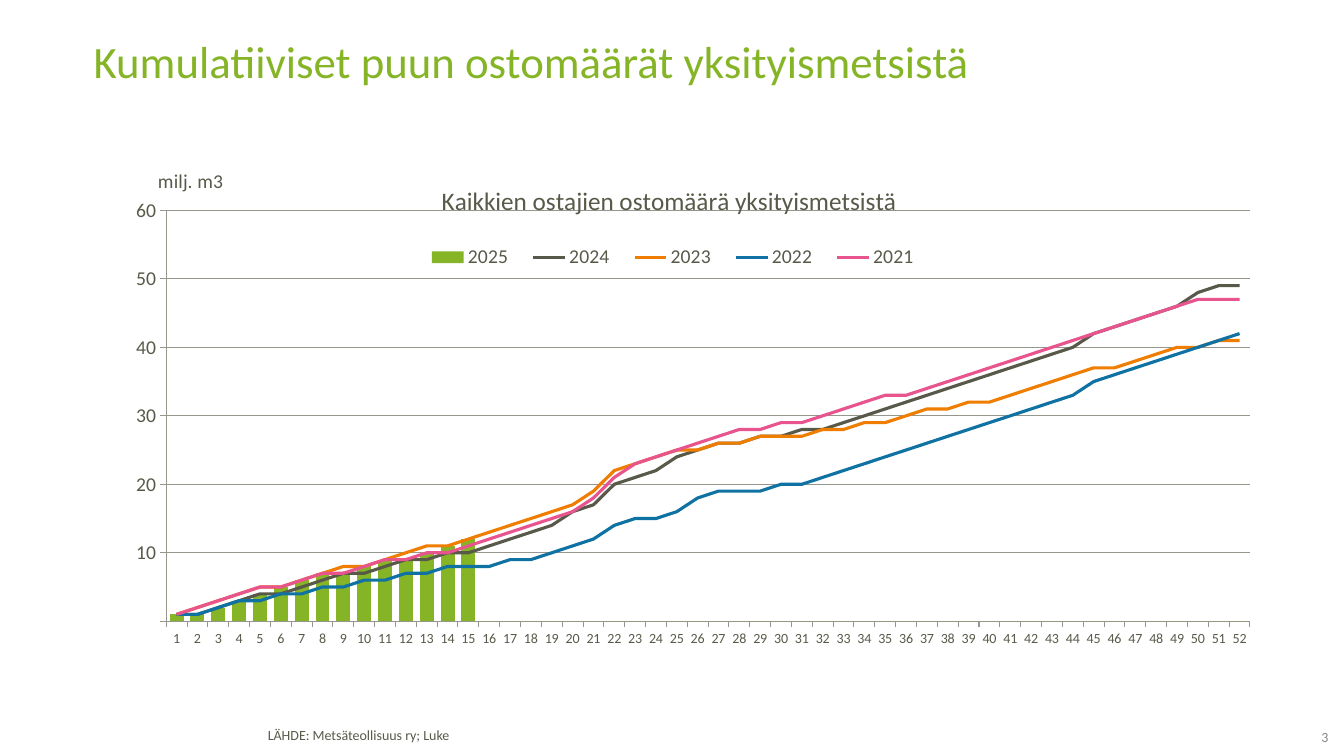
"""Builds the slide on cumulative timber purchases from private forests."""
from dataclasses import dataclass

from lxml import etree
from pptx import Presentation
from pptx.chart.axis import CategoryAxis, ValueAxis
from pptx.chart.chart import Chart
from pptx.chart.data import CategoryChartData
from pptx.dml.color import RGBColor
from pptx.enum.chart import XL_CHART_TYPE, XL_LEGEND_POSITION, XL_MARKER_STYLE, XL_TICK_MARK
from pptx.enum.text import MSO_ANCHOR, MSO_AUTO_SIZE, PP_ALIGN
from pptx.oxml.ns import qn
from pptx.slide import Slide
from pptx.text.text import Font, TextFrame
from pptx.util import Cm, Pt

COLUMNS = XL_CHART_TYPE.COLUMN_CLUSTERED
LEGEND_RIGHT = XL_LEGEND_POSITION.RIGHT
NO_MARKER = XL_MARKER_STYLE.NONE
TICK_OUT, TICK_NONE = XL_TICK_MARK.OUTSIDE, XL_TICK_MARK.NONE
TOP, MIDDLE = MSO_ANCHOR.TOP, MSO_ANCHOR.MIDDLE
LEFT, RIGHT = PP_ALIGN.LEFT, PP_ALIGN.RIGHT
NO_AUTOFIT = MSO_AUTO_SIZE.NONE
MILLION = 1_000_000
WEEKS = 52


@dataclass(frozen=True)
class Theme:
    font: str = "Calibri"
    green: str = "85B526"
    text: str = "59594A"
    grey: str = "878787"
    grid: str = "96968C"
    title_size: float = 32
    chart_title_size: float = 18
    label_size: float = 14
    small_size: float = 10
    series_width: float = 2.25
    grid_width: float = 0.75


@dataclass(frozen=True)
class Box:
    left: float
    top: float
    width: float
    height: float


@dataclass(frozen=True)
class Label:
    text: str
    box: Box
    size: float
    color: str
    align: PP_ALIGN = LEFT
    anchor: MSO_ANCHOR = TOP
    spacing: float = 1.0
    insets: tuple[float, float, float, float] = (0.25, 0.13, 0.25, 0.13)


@dataclass(frozen=True)
class Year:
    name: str
    color: str
    millions: tuple[int, ...]


THEME = Theme()

TITLE = Label("Kumulatiiviset puun ostomäärät yksityismetsistä",
              Box(2.11, 0.99, 29.69, 2.49), THEME.title_size, THEME.green, spacing=0.8)
FOOTERS = (
    Label("LÄHDE: Metsäteollisuus ry; Luke", Box(6.5, 18.24, 18.24, 0.69),
          THEME.small_size, THEME.text, spacing=0.85),
    Label("3", Box(32.13, 18.39, 1.35, 0.48), THEME.small_size, THEME.grey,
          RIGHT, MIDDLE, insets=(0, 0, 0, 0.1)),
)
CHART_BOX = Box(2.11, 3.99, 29.69, 13.11)
YEARS = (
    Year("2025", THEME.green,
         (1, 1, 2, 3, 4, 5, 6, 7, 7, 8, 9, 9, 10, 11, 12) + (0,) * (WEEKS - 15)),
    Year("2024", THEME.text,
         (1, 1, 2, 3, 4, 4, 5, 6, 7, 7, 8, 9, 9, 10, 10, 11, 12, 13, 14, 16, 17, 20, 21, 22, 24, 25,
          26, 26, 27, 27, 28, 28, 29, 30, 31, 32, 33, 34, 35, 36, 37, 38, 39, 40, 42, 43, 44, 45,
          46, 48, 49, 49)),
    Year("2023", "EF7D00",
         (1, 2, 3, 4, 5, 5, 6, 7, 8, 8, 9, 10, 11, 11, 12, 13, 14, 15, 16, 17, 19, 22, 23, 24, 25, 25,
          26, 26, 27, 27, 27, 28, 28, 29, 29, 30, 31, 31, 32, 32, 33, 34, 35, 36, 37, 37, 38, 39,
          40, 40, 41, 41)),
    Year("2022", "0F72A2",
         (1, 1, 2, 3, 3, 4, 4, 5, 5, 6, 6, 7, 7, 8, 8, 8, 9, 9, 10, 11, 12, 14, 15, 15, 16, 18,
          19, 19, 19, 20, 20, 21, 22, 23, 24, 25, 26, 27, 28, 29, 30, 31, 32, 33, 35, 36, 37, 38,
          39, 40, 41, 42)),
    Year("2021", "E8548D",
         (1, 2, 3, 4, 5, 5, 6, 7, 7, 8, 9, 9, 10, 10, 11, 12, 13, 14, 15, 16, 18, 21, 23, 24, 25, 26,
          27, 28, 28, 29, 29, 30, 31, 32, 33, 33, 34, 35, 36, 37, 38, 39, 40, 41, 42, 43, 44, 45,
          46, 47, 47, 47)),
)


def lengths(box: Box) -> tuple[Cm, Cm, Cm, Cm]:
    return Cm(box.left), Cm(box.top), Cm(box.width), Cm(box.height)


def style_font(font: Font, size: float, color: str) -> None:
    font.name, font.size, font.bold = THEME.font, Pt(size), False
    font.color.rgb = RGBColor.from_string(color)


def write_label(frame: TextFrame, label: Label) -> None:
    frame.word_wrap, frame.auto_size = True, NO_AUTOFIT
    frame.vertical_anchor = label.anchor
    (frame.margin_left, frame.margin_top,
     frame.margin_right, frame.margin_bottom) = map(Cm, label.insets)
    paragraph = frame.paragraphs[0]
    paragraph.alignment, paragraph.line_spacing = label.align, label.spacing
    run = paragraph.add_run()
    run.text = label.text
    style_font(run.font, label.size, label.color)


def write_chart_title(frame: TextFrame, text: str, size: float) -> None:
    run = frame.paragraphs[0].add_run()
    run.text = text
    style_font(run.font, size, THEME.text)


def add_value(parent: etree._Element, tag: str, value: str) -> None:
    etree.SubElement(parent, qn(tag)).set("val", value)


def place(parent: etree._Element, index: int, **fractions: float) -> None:
    for old in parent.findall(qn("c:layout")):
        parent.remove(old)
    layout = parent.makeelement(qn("c:layout"))
    manual = etree.SubElement(layout, qn("c:manualLayout"))
    if parent.tag == qn("c:plotArea"):
        add_value(manual, "c:layoutTarget", "inner")
    for name in ("x", "y"):
        add_value(manual, f"c:{name}Mode", "edge")
    for name, fraction in fractions.items():
        add_value(manual, f"c:{name}", str(fraction))
    parent.insert(index, layout)


def move_to_lines(chart: Chart) -> None:
    bars = chart.element.find(".//" + qn("c:barChart"))
    lines = bars.makeelement(qn("c:lineChart"))
    bars.addnext(lines)
    add_value(lines, "c:grouping", "standard")
    add_value(lines, "c:varyColors", "0")
    for series in bars.findall(qn("c:ser"))[1:]:
        for bar_setting in series.findall(qn("c:invertIfNegative")):
            series.remove(bar_setting)
        lines.append(series)
    add_value(lines, "c:marker", "1")
    for axis in bars.findall(qn("c:axId")):
        add_value(lines, "c:axId", axis.get("val"))


def style_axis(axis: CategoryAxis | ValueAxis, size: float) -> None:
    axis.major_tick_mark, axis.minor_tick_mark = TICK_OUT, TICK_NONE
    style_font(axis.tick_labels.font, size, THEME.text)
    lines = [axis.format.line]
    if axis.has_major_gridlines:
        lines.append(axis.major_gridlines.format.line)
    for line in lines:
        line.color.rgb = RGBColor.from_string(THEME.grid)
        line.width = Pt(THEME.grid_width)


def style_series(chart: Chart) -> None:
    bars, lines = chart.plots
    bars.gap_width, bars.vary_by_categories = 50, False
    fill = bars.series[0].format.fill
    fill.solid()
    fill.fore_color.rgb = RGBColor.from_string(YEARS[0].color)
    for series, year in zip(lines.series, YEARS[1:]):
        series.smooth, series.marker.style = False, NO_MARKER
        series.format.line.color.rgb = RGBColor.from_string(year.color)
        series.format.line.width = Pt(THEME.series_width)


def add_purchase_chart(slide: Slide) -> None:
    data = CategoryChartData(number_format="#,,")
    data.categories = [str(week) for week in range(1, WEEKS + 1)]
    for year in YEARS:
        data.add_series(year.name, [value * MILLION for value in year.millions])
    chart = slide.shapes.add_chart(COLUMNS, *lengths(CHART_BOX), data).chart
    style_font(chart.font, THEME.small_size, THEME.text)
    move_to_lines(chart)
    style_series(chart)

    value_axis = chart.value_axis
    value_axis.minimum_scale, value_axis.maximum_scale = 0, 60 * MILLION
    value_axis.major_unit = 10 * MILLION
    value_axis.tick_labels.number_format = "#,,"
    value_axis.tick_labels.number_format_is_linked = False
    style_axis(value_axis, THEME.label_size)
    style_axis(chart.category_axis, THEME.small_size)

    write_chart_title(chart.chart_title.text_frame,
                      "Kaikkien ostajien ostomäärä yksityismetsistä", THEME.chart_title_size)
    write_chart_title(value_axis.axis_title.text_frame, "milj. m3", THEME.label_size)
    chart.has_legend = True
    chart.legend.position, chart.legend.include_in_layout = LEGEND_RIGHT, False
    style_font(chart.legend.font, THEME.label_size, THEME.text)

    root = chart.element.find(qn("c:chart"))
    plot_area, title = root.find(qn("c:plotArea")), root.find(qn("c:title"))
    axis_title = plot_area.find(qn("c:valAx")).find(qn("c:title"))
    body = axis_title.find(".//" + qn("a:bodyPr"))
    body.set("rot", "0")
    body.set("vert", "horz")
    place(plot_area, 0, x=0.07, y=0.1, w=0.92, h=0.79)
    place(title, 1, x=0.3, y=0.04)
    place(axis_title, 1, x=0.06, y=0.01)
    place(root.find(qn("c:legend")), 1, x=0.28, y=0.15, w=0.44, h=0.08)


def main() -> None:
    presentation = Presentation()
    presentation.slide_width, presentation.slide_height = Cm(33.87), Cm(19.05)
    slide = presentation.slides.add_slide(presentation.slide_layouts[5])
    title = slide.shapes.title
    title.left, title.top, title.width, title.height = lengths(TITLE.box)
    write_label(title.text_frame, TITLE)
    add_purchase_chart(slide)
    for label in FOOTERS:
        write_label(slide.shapes.add_textbox(*lengths(label.box)).text_frame, label)
    presentation.save("out.pptx")


if __name__ == "__main__":
    main()
